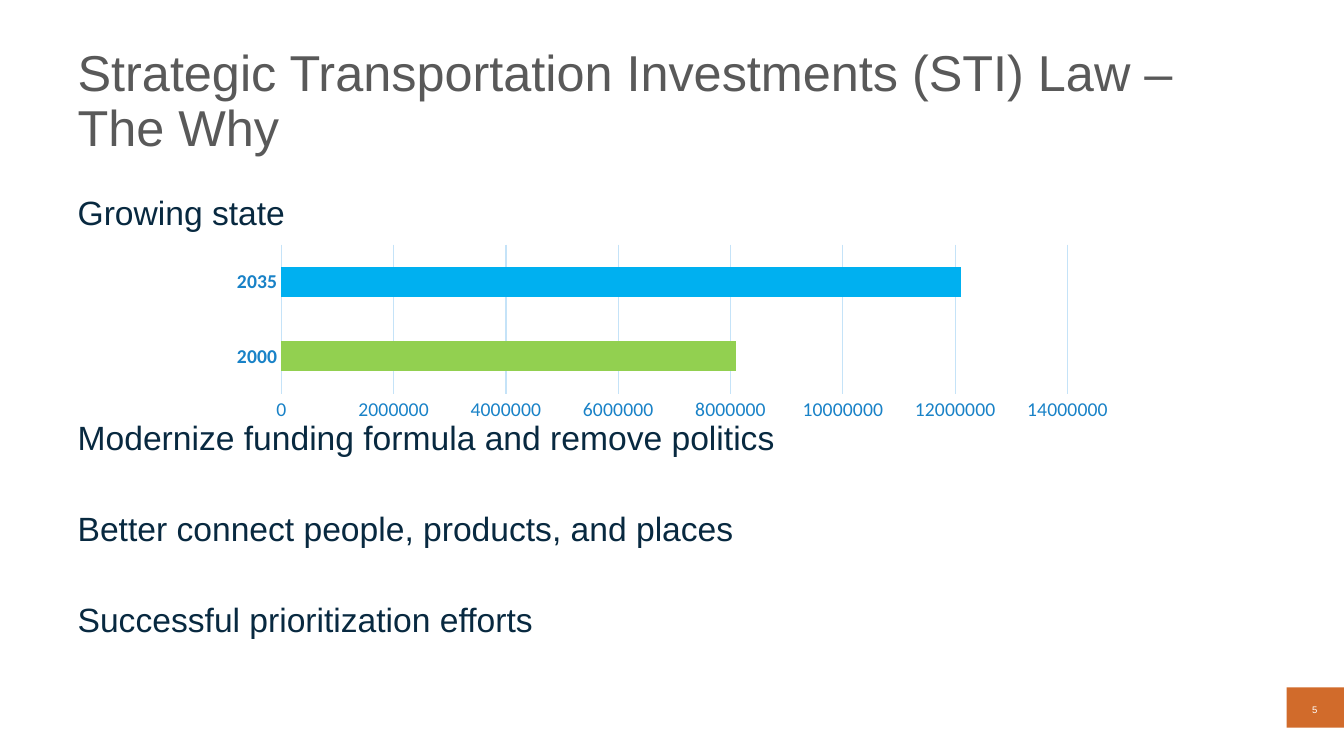
from pptx import Presentation
from pptx.chart.data import CategoryChartData
from pptx.dml.color import RGBColor
from pptx.enum.chart import XL_CHART_TYPE as ChartType, XL_TICK_MARK as TickMark
from pptx.enum.shapes import MSO_SHAPE as Shape
from pptx.enum.text import MSO_ANCHOR as Anchor, MSO_AUTO_SIZE as AutoSize, PP_ALIGN as Align
from pptx.oxml.ns import qn
from pptx.util import Inches, Pt

COLORS = {
    "title": "595959", "body": "082940", "badge": "D16B2B", "white": "FFFFFF",
    "axis": "1982C7", "grid": "C5E3F8", "green": "92D050", "blue": "00B0F0",
}


def color(name):
    return RGBColor.from_string(COLORS[name])


def style_font(font, size, tint, name="Calibri", bold=False):
    font.name, font.size, font.bold = name, Pt(size), bold
    font.color.rgb = color(tint)


def write(para, text, size=24, tint="body", align=Align.LEFT, before=0, spacing=None):
    span = para.add_run()
    span.text = text
    style_font(span.font, size, tint, "Arial")
    para.alignment = align
    para.space_before = Pt(before)
    para.line_spacing = spacing


class SlideBuilder:
    def __init__(self, deck):
        self.page = deck.slides.add_slide(deck.slide_layouts[1])

    def place(self, box, left, top, width, height):
        box.left, box.top = Inches(left), Inches(top)
        box.width, box.height = Inches(width), Inches(height)
        frame = box.text_frame
        frame.word_wrap, frame.auto_size = True, AutoSize.NONE
        return frame

    def title(self, text, *area):
        frame = self.place(self.page.shapes.title, *area)
        frame.vertical_anchor = Anchor.MIDDLE
        write(frame.paragraphs[0], text, size=36, tint="title", spacing=0.9)

    def points(self, items, *area):
        frame = self.place(self.page.placeholders[1], *area)
        frame.vertical_anchor = Anchor.TOP
        for index, (text, before) in enumerate(items):
            para = frame.add_paragraph() if index else frame.paragraphs[0]
            write(para, text, before=before, spacing=0.9)
            # Plain paragraphs: no bullet and no hanging indent
            props = para._p.get_or_add_pPr()
            props.set("marL", "0")
            props.set("indent", "0")
            props.append(props.makeelement(qn("a:buNone"), {}))

    def bar_chart(self, categories, values, tints, *area):
        data = CategoryChartData()
        data.categories = categories
        data.add_series("Series 1", values)
        chart = self.page.shapes.add_chart(
            ChartType.BAR_CLUSTERED, *map(Inches, area), data).chart
        chart.has_legend = chart.has_title = False
        style_font(chart.font, 10, "body")
        plot = chart.plots[0]
        plot.gap_width, plot.vary_by_categories = 150, False
        for index, tint in enumerate(tints):
            fill = plot.series[0].points[index].format.fill
            fill.solid()
            fill.fore_color.rgb = color(tint)

        # Axes
        years, people = chart.category_axis, chart.value_axis
        for axis in (years, people):
            axis.major_tick_mark = axis.minor_tick_mark = TickMark.NONE
            style_font(axis.tick_labels.font, 14, "axis", bold=axis is years)
        people.minimum_scale, people.maximum_scale, people.major_unit = 0, 14000000, 2000000
        people.tick_labels.number_format = "General"
        people.tick_labels.number_format_is_linked = False
        people.format.line.fill.background()
        for line in (years.format.line, people.major_gridlines.format.line):
            line.color.rgb, line.width = color("grid"), Pt(0.75)

    def badge(self, *area):
        box = self.page.shapes.add_shape(Shape.RECTANGLE, *map(Inches, area))
        box.shadow.inherit = False
        box.fill.solid()
        box.fill.fore_color.rgb = color("badge")
        box.line.fill.background()

    def label(self, text, *area, **style):
        box = self.page.shapes.add_textbox(*map(Inches, area))
        frame = self.place(box, *area)
        write(frame.paragraphs[0], text, **style)


def main():
    deck = Presentation()
    deck.slide_width, deck.slide_height = Inches(13.33), Inches(7.5)
    builder = SlideBuilder(deck)

    # Heading and points, with room for the chart after the first point
    builder.title("Strategic Transportation Investments (STI) Law – The Why",
                  0.67, 0.52, 11.44, 1)
    builder.points([
        ("Growing state", 6),
        ("Modernize funding formula and remove politics", 135),
        ("Better connect people, products, and places", 39),
        ("Successful prioritization efforts", 39),
    ], 0.67, 1.9, 12, 4.95)

    # Population chart
    builder.bar_chart(("2000", "2035"), (8100000, 12100000), ("green", "blue"),
                      2.17, 2.39, 9, 1.83)

    # Page number
    builder.badge(12.76, 6.82, 0.58, 0.4)
    builder.label("5", 12.75, 6.93, 0.58, 0.22, size=6.8, tint="white", align=Align.CENTER)

    deck.save("out.pptx")


if __name__ == "__main__":
    main()
